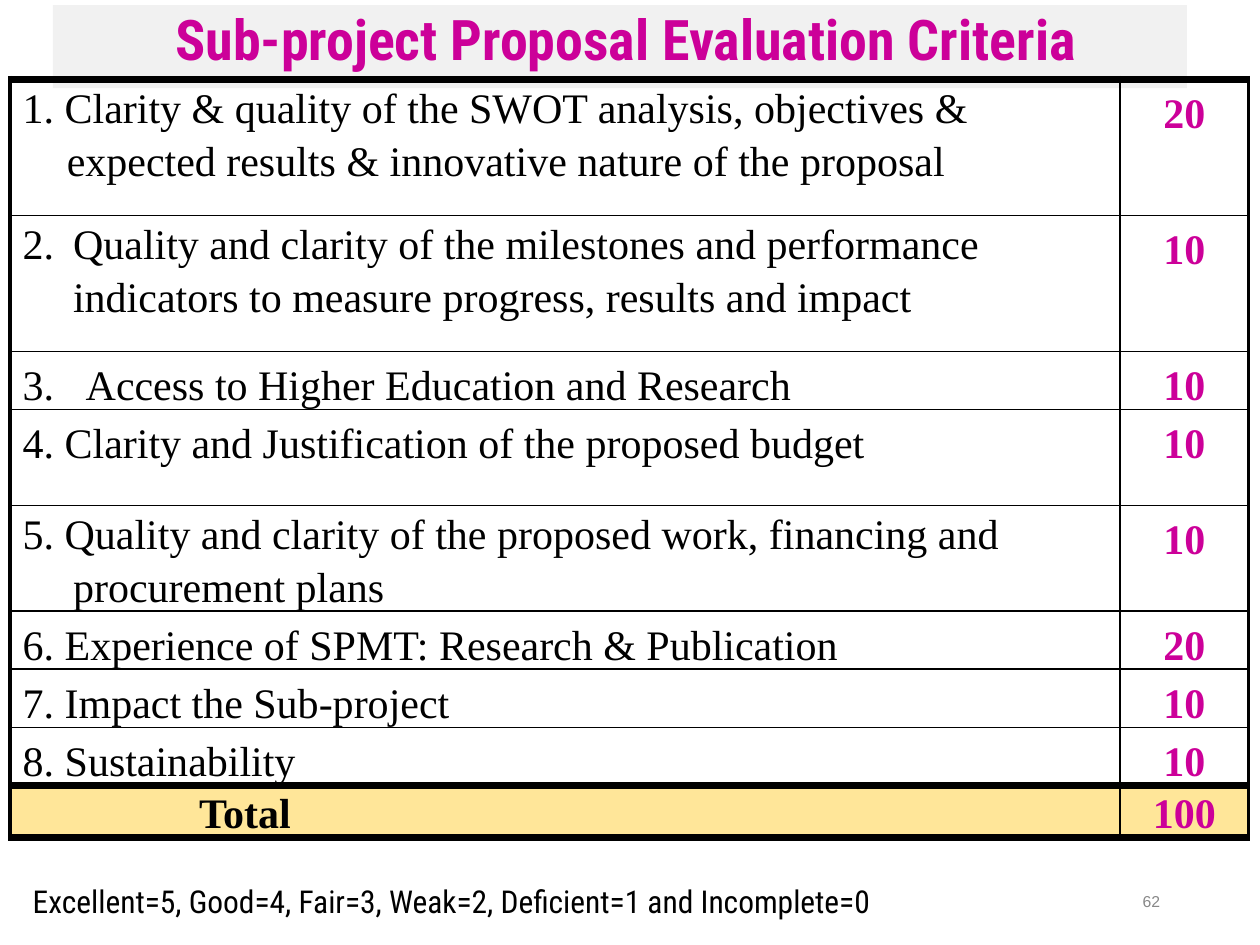
import pptx
import pptx.dml.color
import pptx.enum.shapes
import pptx.enum.text
import pptx.oxml
import pptx.oxml.ns
import pptx.util

GRID_COLUMNS, GRID_ROWS = 100, 75
BLACK, MAGENTA, GREY, PALE, AMBER = "000000", "CC0099", "888888", "F1F1F1", "FFE699"
SERIF, CONDENSED, SANS = "Times New Roman", "Roboto Condensed", "Arial"
THIN, OUTER, THICK = 1, 2.25, 4.5
CENTER = pptx.enum.text.PP_ALIGN.CENTER


def color(hex_code):
    return pptx.dml.color.RGBColor.from_string(hex_code)


def add_xml(parent, markup, position=None):
    """Insert a DrawingML element, given without its namespace, into parent."""
    tag, rest = markup[1:].split(" ", 1)
    element = pptx.oxml.parse_xml(f"<a:{tag} {pptx.oxml.ns.nsdecls('a')} {rest}")
    parent.insert(len(parent) if position is None else position, element)


class CriteriaSlide:
    def __init__(self, deck):
        self.slide = deck.slides.add_slide(deck.slide_layouts[6])
        self.column = deck.slide_width / GRID_COLUMNS
        self.row = deck.slide_height / GRID_ROWS

    def area(self, left, top, width, height):
        return (round(left * self.column), round(top * self.row),
                round(width * self.column), round(height * self.row))

    def add_text(self, frame, text, size, font, ink, bold=False, align=None,
                 line=None, before=0, left=0, first=0, right=0, tab=None):
        """Fill the frame's first paragraph; indents and tab are in grid columns."""
        frame.word_wrap = True
        paragraph = frame.paragraphs[0]
        paragraph.alignment = align
        paragraph.space_before = pptx.util.Pt(before)
        if line:
            paragraph.line_spacing = pptx.util.Pt(line)
        properties = paragraph._p.get_or_add_pPr()
        for name, length in (("marL", left), ("marR", right), ("indent", first)):
            properties.set(name, str(round(length * self.column)))
        if tab:
            add_xml(properties, f'<tabLst ><a:tab pos="{round(tab * self.column)}" '
                                'algn="l"/></a:tabLst>')
        run = paragraph.add_run()
        run.text = text
        run.font.size = pptx.util.Pt(size)
        run.font.name = font
        run.font.bold = bold
        run.font.color.rgb = color(ink)

    def clear_margins(self, holder):
        holder.margin_left = holder.margin_right = 0
        holder.margin_top = holder.margin_bottom = 0
        holder.vertical_anchor = pptx.enum.text.MSO_ANCHOR.TOP

    def note(self, area, text, **style):
        frame = self.slide.shapes.add_textbox(*self.area(*area)).text_frame
        self.clear_margins(frame)
        frame.margin_top = pptx.util.Pt(1)
        self.add_text(frame, text, before=1, left=0.1, **style)

    def banner(self, area, text, fill, **style):
        banner = self.slide.shapes.add_shape(
            pptx.enum.shapes.MSO_SHAPE.RECTANGLE, *self.area(*area))
        banner.shadow.inherit = False
        banner.fill.solid()
        banner.fill.fore_color.rgb = color(fill)
        banner.line.fill.background()
        self.clear_margins(banner.text_frame)
        self.add_text(banner.text_frame, text, align=CENTER, left=1, **style)

    def borders(self, cell, left, right, top, bottom):
        """Draw cell borders with widths in points; None leaves a side bare."""
        properties = cell._tc.get_or_add_tcPr()
        for position, (side, width) in enumerate(
                zip("LRTB", (left, right, top, bottom))):
            paint = (f'<a:solidFill><a:srgbClr val="{BLACK}"/></a:solidFill>'
                     if width else "<a:noFill/>")
            add_xml(properties, f'<ln{side} w="{int((width or 0) * 12700)}">'
                                f"{paint}</a:ln{side}>", position)

    def score_table(self, area, widths, criteria):
        table = self.slide.shapes.add_table(
            len(criteria), len(widths), *self.area(*area)).table
        table.first_row = table.horz_banding = False
        for column, width in zip(table.columns, widths):
            column.width = round(width * self.column)
        total = len(criteria) - 1
        for index, (height, text, score, merged, layout) in enumerate(criteria):
            table.rows[index].height = round(height * self.row)
            cells = [table.cell(index, number) for number in range(len(widths))]
            is_total = index == total
            top = THICK if index in (0, total) else THIN
            bottom = THICK if index >= total - 1 else THIN
            for cell, sides in zip(cells, ((OUTER, THIN if merged else None),
                                           (None, THIN), (THIN, OUTER))):
                self.clear_margins(cell)
                if is_total:
                    cell.fill.solid()
                    cell.fill.fore_color.rgb = color(AMBER)
                else:
                    cell.fill.background()
                self.borders(cell, *sides, top, bottom)
            if merged:
                cells[0].merge(cells[1])
            self.add_text(cells[0].text_frame, text, 24, SERIF, BLACK,
                          bold=is_total, **layout)
            self.add_text(cells[2].text_frame, score, 24, SERIF, MAGENTA, bold=True,
                          align=CENTER, line=29.9 if is_total else 33.1)


SINGLE = dict(left=1, line=33.2)
HANGING = dict(left=5, first=-4, right=2, line=30.2, before=3.5)

# Row height, criterion, score, whether it spans two columns, paragraph layout
CRITERIA = [
    (10.8, "1. Clarity & quality of the SWOT analysis, objectives & expected "
           "results & innovative nature of the proposal", "20", True,
     {**HANGING, "left": 4.5, "first": -3.5}),
    (10.8, "2.\tQuality and clarity of the milestones and performance indicators "
           "to measure progress, results and impact", "10", True,
     {**HANGING, "tab": 4.8}),
    (4.2, "3.\tAccess to Higher Education and Research", "10", False,
     {**SINGLE, "tab": 5.2}),
    (7.6, "4. Clarity and Justification of the proposed budget", "10", False, SINGLE),
    (7.2, "5. Quality and clarity of the proposed work, financing and "
          "procurement plans", "10", True, HANGING),
    (4.2, "6. Experience of SPMT: Research & Publication", "20", False, SINGLE),
    (3.7, "7. Impact the Sub-project", "10", False, SINGLE),
    (3.7, "8. Sustainability", "10", False, SINGLE),
    (3.6, "Total", "100", True, dict(left=15, line=29.9)),
]


def main():
    deck = pptx.Presentation()
    deck.slide_width = pptx.util.Inches(10)
    deck.slide_height = pptx.util.Inches(7.5)
    page = CriteriaSlide(deck)
    page.note((90.6, 70.6, 3, 1.8), "62", size=9, font=SANS, ink=GREY)
    page.banner((4.2, 0.4, 90, 6.6), "Sub-project Proposal Evaluation Criteria",
                PALE, size=32, font=CONDENSED, ink=MAGENTA, bold=True, line=38)
    page.score_table((0.8, 6.3, 98.3, 55.8), (77.8, 10.3, 10.2), CRITERIA)
    page.note((2.5, 69.9, 84.8, 3.2),
              "Excellent=5, Good=4, Fair=3, Weak=2, Deficient=1 and Incomplete=0",
              size=18, font=CONDENSED, ink=BLACK)
    deck.save("out.pptx")


if __name__ == "__main__":
    main()
